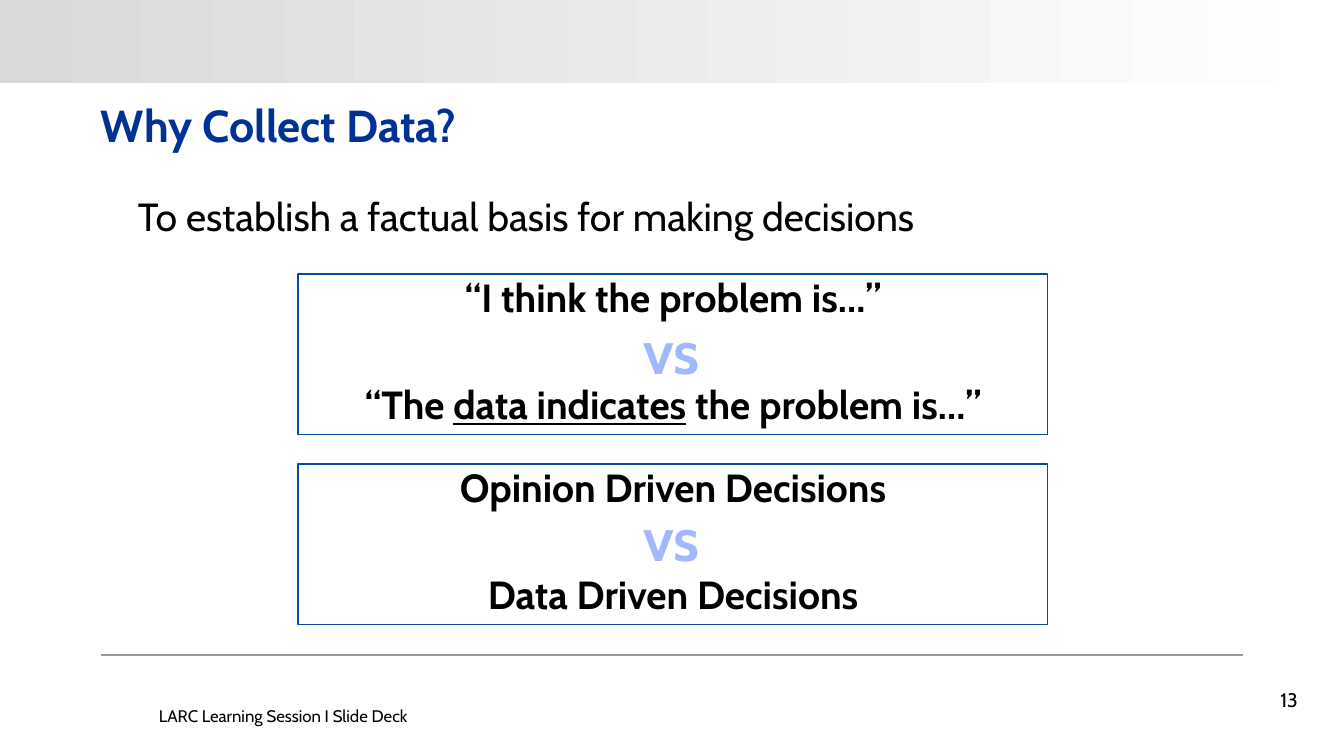
from pptx import Presentation
from pptx import util as u
from pptx.dml.color import RGBColor
from pptx.enum import shapes, text
from pptx.oxml.ns import qn
from lxml import etree

EMU_PER_PX = 914400 / 100.8
FONT = "Cabin"
BLACK = RGBColor(0x00, 0x00, 0x00)
WHITE = RGBColor(0xFF, 0xFF, 0xFF)
BAND_GRAY = RGBColor(0xD9, 0xD9, 0xD9)
RULE_GRAY = RGBColor(0x9A, 0x9A, 0x9A)
TITLE_BLUE = RGBColor(0x00, 0x32, 0x96)
FRAME_BLUE = RGBColor(0x00, 0x4D, 0xA0)
VERSUS_BLUE = RGBColor(0xA1, 0xB8, 0xFF)


def px(length):
    return u.Emu(round(length * EMU_PER_PX))


def add_run(paragraph, words, size, color=BLACK, bold=False, underline=False):
    run = paragraph.add_run()
    run.text = words
    font = run.font
    font.name = FONT
    font.size = u.Pt(size)
    font.bold = bold
    font.underline = underline
    font.color.rgb = color


def add_band(slide):
    """Gray-to-white strip across the top of the slide."""
    band = slide.shapes.add_shape(
        shapes.MSO_SHAPE.RECTANGLE, 0, 0, px(1344), px(83))
    band.shadow.inherit = False
    band.line.fill.background()
    band.fill.gradient()
    band.fill.gradient_angle = 0
    for stop, color, position in zip(
            band.fill.gradient_stops, (BAND_GRAY, WHITE), (0, 1)):
        stop.color.rgb = color
        stop.position = position


def add_rule(slide, left, right, top):
    rule = slide.shapes.add_connector(
        shapes.MSO_CONNECTOR.STRAIGHT, px(left), px(top), px(right), px(top))
    rule.line.color.rgb = RULE_GRAY
    rule.line.width = u.Pt(1)
    etree.SubElement(rule._element.spPr, qn("a:effectLst"))


def set_title(slide, words):
    title = slide.shapes.title
    title.left, title.top = px(101), px(101)
    title.width, title.height = px(1142), px(62)
    frame = title.text_frame
    frame.auto_size = text.MSO_AUTO_SIZE.NONE
    frame.vertical_anchor = text.MSO_ANCHOR.TOP
    frame.margin_left = frame.margin_right = 0
    paragraph = frame.paragraphs[0]
    paragraph.alignment = text.PP_ALIGN.LEFT
    paragraph.line_spacing = 0.85
    add_run(paragraph, words, 32, TITLE_BLUE, bold=True)


def add_label(slide, words, box, size, align=text.PP_ALIGN.LEFT,
              spacing=1.0, color=BLACK, bold=False, wrap=True):
    label = slide.shapes.add_textbox(*map(px, box))
    frame = label.text_frame
    frame.word_wrap = wrap
    paragraph = frame.paragraphs[0]
    paragraph.alignment = align
    paragraph.line_spacing = spacing
    add_run(paragraph, words, size, color, bold)
    return frame


def add_contrast(slide, top, statements):
    """Framed pair of statements with "vs" between; a statement is a list of
    (words, underlined) pieces."""
    box = slide.shapes.add_shape(
        shapes.MSO_SHAPE.RECTANGLE, px(298), px(top), px(750), px(161))
    box.shadow.inherit = False
    box.fill.background()
    box.line.color.rgb = FRAME_BLUE
    box.line.width = u.Pt(0.75)
    frame = box.text_frame
    frame.word_wrap = True
    frame.vertical_anchor = text.MSO_ANCHOR.TOP
    for index, pieces in enumerate(statements):
        paragraph = frame.add_paragraph() if index else frame.paragraphs[0]
        paragraph.alignment = text.PP_ALIGN.CENTER
        paragraph.line_spacing = 0.9
        if index:
            paragraph.space_before = u.Pt(46)
        for words, underlined in pieces:
            add_run(paragraph, words, 28, bold=True, underline=underlined)


def add_versus(slide, top):
    add_label(slide, "vs", (633, top, 77, 85), 44, text.PP_ALIGN.CENTER,
              color=VERSUS_BLUE, bold=True, wrap=False)


def main():
    presentation = Presentation()
    presentation.slide_width, presentation.slide_height = px(1344), px(756)
    slide = presentation.slides.add_slide(presentation.slide_layouts[5])

    add_band(slide)
    add_rule(slide, 101, 1243, 655)
    set_title(slide, "Why Collect Data?")
    add_label(slide, "To establish a factual basis for making decisions",
              (128, 193, 978, 52), 28, spacing=0.9)

    add_contrast(slide, 274, [
        [("“I think the problem is…”", False)],
        [("“The ", False), ("data indicates", True),
         (" the problem is…”", False)]])
    add_versus(slide, 308)
    add_contrast(slide, 464, [
        [("Opinion Driven Decisions", False)],
        [("Data Driven Decisions", False)]])
    add_versus(slide, 495)

    number = add_label(slide, "13", (996, 681, 302, 40), 14,
                       text.PP_ALIGN.RIGHT, spacing=0.9)
    number.margin_left = number.margin_right = 0
    number.vertical_anchor = text.MSO_ANCHOR.MIDDLE
    add_label(slide, "LARC Learning Session I Slide Deck",
              (149, 701, 302, 30), 12)

    presentation.save("out.pptx")


if __name__ == "__main__":
    main()
